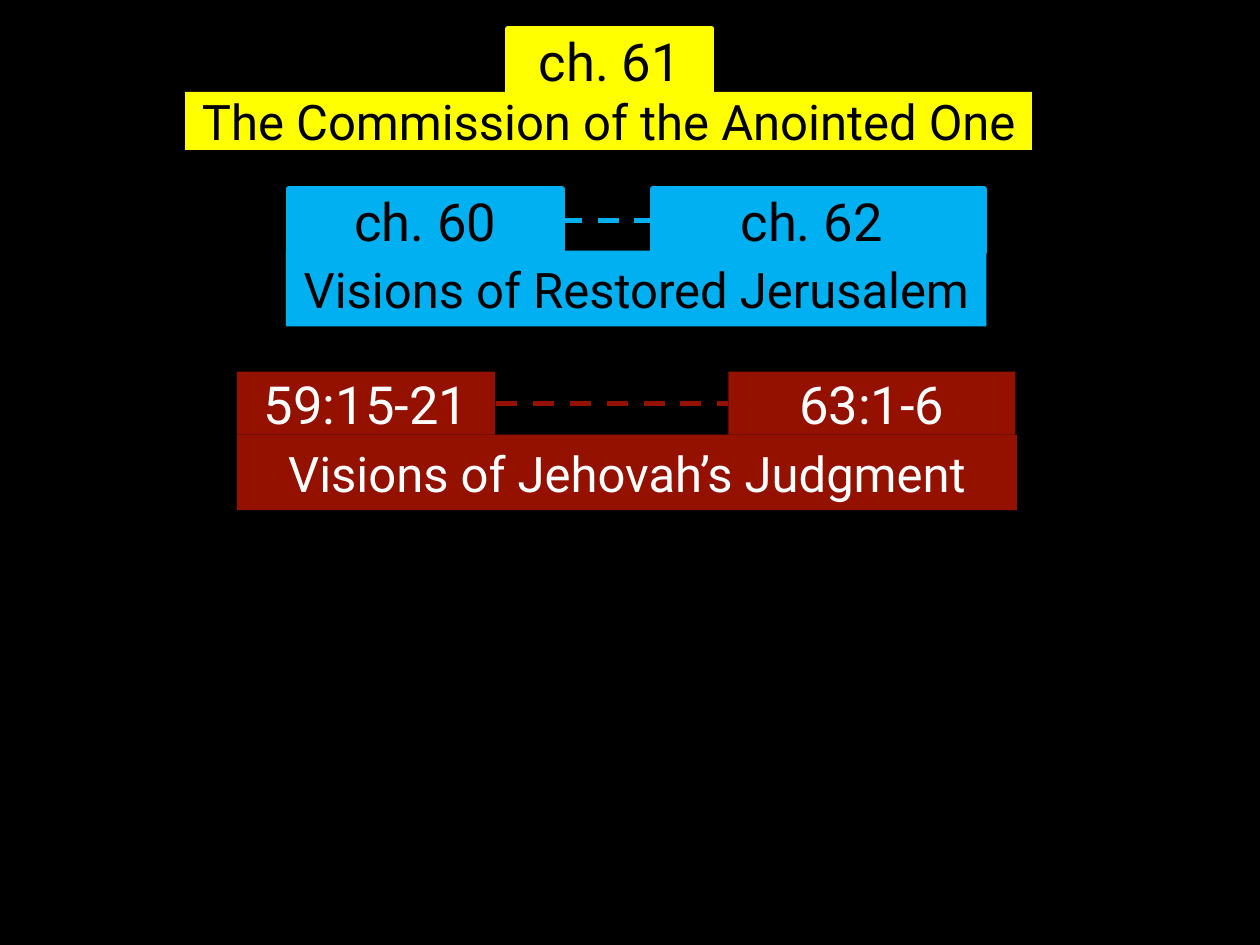
from lxml import etree
from pptx import Presentation
from pptx.dml.color import RGBColor
from pptx.enum.dml import MSO_LINE
from pptx.enum.shapes import MSO_CONNECTOR, MSO_SHAPE
from pptx.enum.text import MSO_ANCHOR, PP_ALIGN
from pptx.oxml.ns import qn
from pptx.util import Inches, Pt

RECTANGLE = MSO_SHAPE.RECTANGLE
STRAIGHT = MSO_CONNECTOR.STRAIGHT
DASH = MSO_LINE.DASH
MIDDLE = MSO_ANCHOR.MIDDLE
CENTER = PP_ALIGN.CENTER

COLORS = {
    "black": "000000",
    "white": "FFFFFF",
    "commission": "FFFF00",
    "restoration": "00B0F0",
    "judgment": "941100",
}
FONT = "Roboto"
CHAPTER_SIZE = 30
THEME_SIZE = 28
CHAPTER_HEIGHT = 0.5
LINE_WIDTH = Pt(3)


def color(name):
    return RGBColor.from_string(COLORS[name])


def add_box(slide, text, left, top, width, height, fill, ink, size, outlined=False):
    shape = slide.shapes.add_shape(
        RECTANGLE, Inches(left), Inches(top), Inches(width), Inches(height)
    )
    shape.shadow.inherit = False
    shape.fill.solid()
    shape.fill.fore_color.rgb = color(fill)
    if outlined:
        shape.line.color.rgb = color(fill)
        shape.line.width = LINE_WIDTH
    else:
        shape.line.fill.background()
    shape.text_frame.vertical_anchor = MIDDLE
    paragraph = shape.text_frame.paragraphs[0]
    paragraph.text = text
    paragraph.alignment = CENTER
    paragraph.font.name = FONT
    paragraph.font.size = Pt(size)
    paragraph.font.color.rgb = color(ink)


def add_chapter(slide, text, left, top, width, fill, ink="black", outlined=True):
    add_box(slide, text, left, top, width, CHAPTER_HEIGHT, fill, ink, CHAPTER_SIZE, outlined)


def add_theme(slide, text, left, top, width, height, fill, ink="black"):
    add_box(slide, text, left, top, width, height, fill, ink, THEME_SIZE)


def add_dashed_link(slide, start, end, chapter_top, line_color):
    middle = Inches(chapter_top + CHAPTER_HEIGHT / 2)
    connector = slide.shapes.add_connector(
        STRAIGHT, Inches(start), middle, Inches(end), middle
    )
    connector.line.color.rgb = color(line_color)
    connector.line.width = LINE_WIDTH
    connector.line.dash_style = DASH
    properties = connector._element.find(qn("p:spPr"))
    etree.SubElement(properties, qn("a:effectLst"))


def main():
    presentation = Presentation()
    presentation.slide_width = Inches(10)
    presentation.slide_height = Inches(7.5)
    slide = presentation.slides.add_slide(presentation.slide_layouts[6])
    slide.background.fill.solid()
    slide.background.fill.fore_color.rgb = color("black")

    restoration_top = 1.5
    add_chapter(slide, "ch. 62 ", 5.18, restoration_top, 2.63, "restoration")
    add_chapter(slide, "ch. 60", 2.29, restoration_top, 2.17, "restoration")
    add_chapter(slide, "ch. 61", 4.03, 0.23, 1.62, "commission")
    add_theme(slide, "The Commission of the Anointed One", 1.47, 0.73, 6.72, 0.46, "commission")
    add_theme(slide, "Visions of Restored Jerusalem", 2.27, 1.99, 5.56, 0.6, "restoration")
    add_dashed_link(slide, 4.45, 5.18, restoration_top, "restoration")

    judgment_top = 2.95
    add_chapter(slide, "59:15-21", 1.88, judgment_top, 2.05, "judgment", "white", False)
    add_chapter(slide, "63:1-6", 5.78, judgment_top, 2.28, "judgment", "white", False)
    add_theme(slide, "Visions of Jehovah’s Judgment", 1.88, 3.45, 6.19, 0.6, "judgment", "white")
    add_dashed_link(slide, 3.94, 5.78, judgment_top, "judgment")

    presentation.save("out.pptx")


if __name__ == "__main__":
    main()
